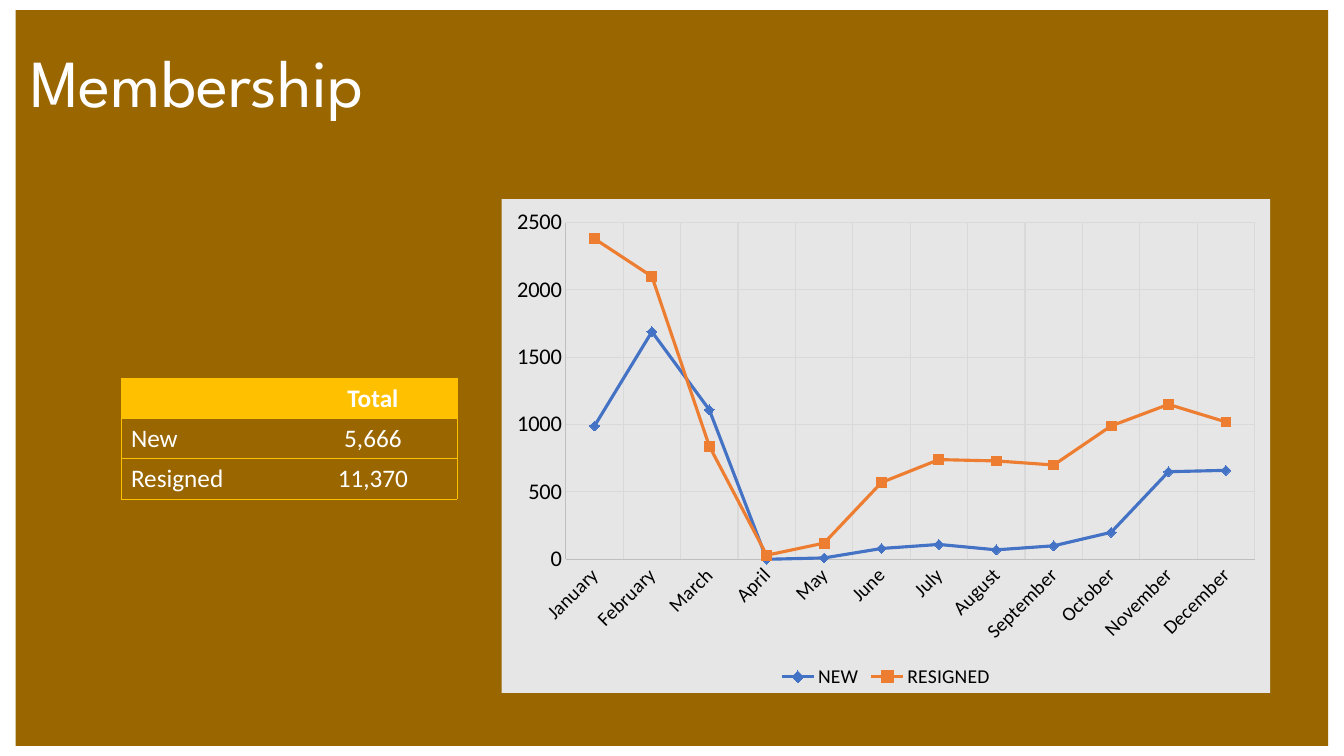
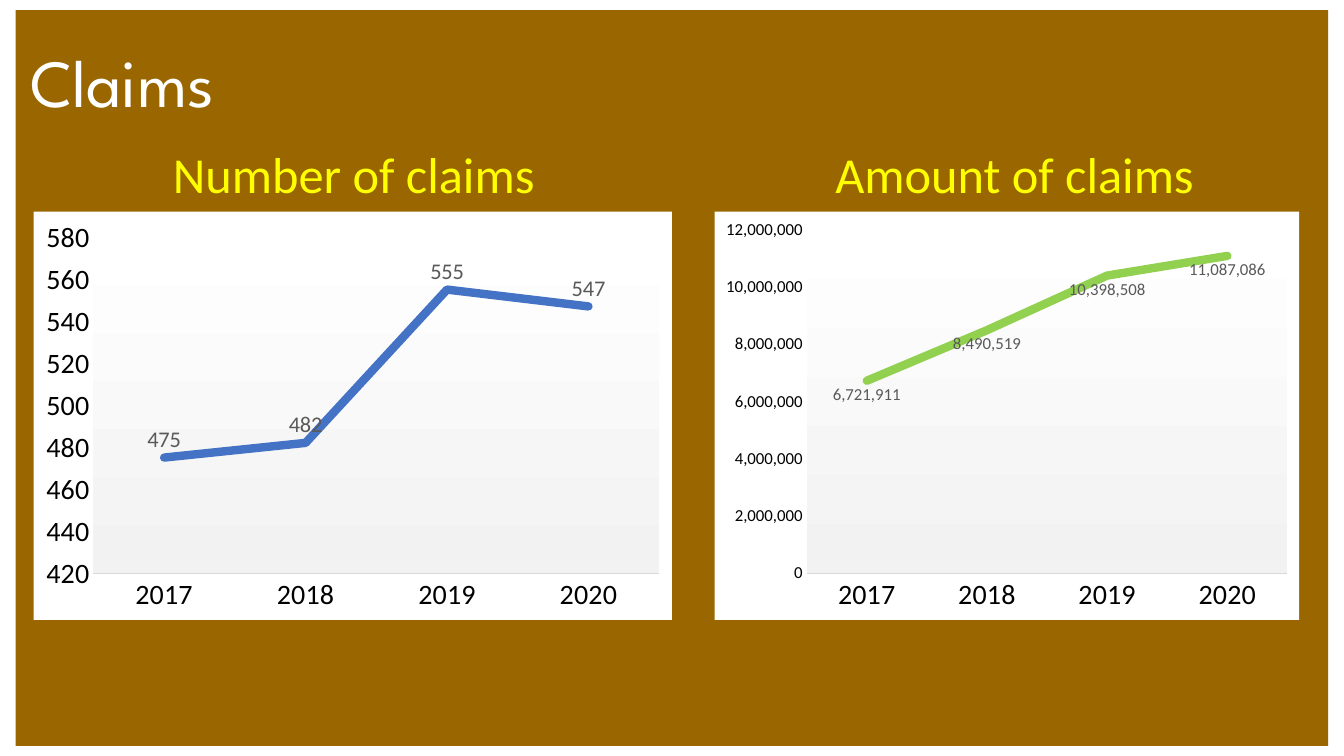
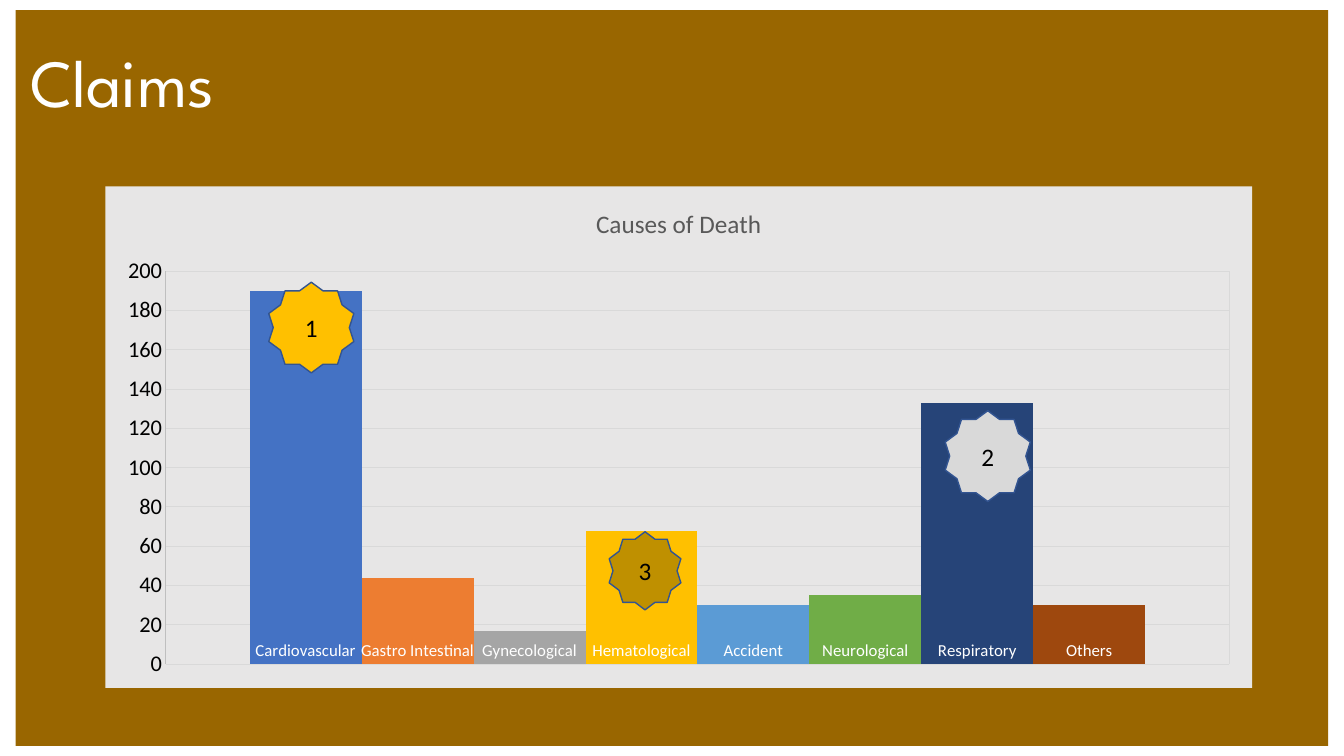
from dataclasses import dataclass

from lxml import etree
from pptx import Presentation
from pptx.chart.data import CategoryChartData as ChartData
from pptx.dml.color import RGBColor as RGB
from pptx.enum.chart import XL_CHART_TYPE as ChartType
from pptx.enum.chart import XL_LABEL_POSITION as LabelAt
from pptx.enum.chart import XL_LEGEND_POSITION as LegendAt
from pptx.enum.chart import XL_MARKER_STYLE as Marker
from pptx.enum.chart import XL_TICK_MARK as Tick
from pptx.enum.shapes import MSO_SHAPE as Preset
from pptx.enum.text import MSO_ANCHOR as Anchor
from pptx.enum.text import PP_ALIGN as Align
from pptx.oxml import parse_xml
from pptx.oxml.ns import nsdecls, qn
from pptx.util import Inches, Pt


@dataclass(frozen=True)
class Theme:
    title_font: str = "League Spartan"
    body_font: str = "Calibri"
    brown: str = "996600"
    white: str = "FFFFFF"
    black: str = "000000"
    yellow: str = "FFFF00"
    gold: str = "FFC000"
    silver: str = "D9D9D9"
    bronze: str = "BF9000"
    outline: str = "325491"
    blue: str = "4472C4"
    orange: str = "ED7D31"
    green: str = "92D050"
    panel: str = "E7E6E6"
    pale: str = "F2F2F2"
    grid: str = "D9D9D9"
    axis: str = "BFBFBF"
    grey: str = "595959"
    title: int = 48
    heading: int = 36
    large: int = 20
    body: int = 18
    medium: int = 16
    legend: int = 14
    small: int = 12


theme = Theme()


def write(frame, text, size, color, font=theme.body_font, align=Align.LEFT, bold=False):
    frame.word_wrap = True
    frame.vertical_anchor = Anchor.MIDDLE
    paragraph = frame.paragraphs[0]
    paragraph.alignment = align
    run = paragraph.add_run()
    run.text = text
    run.font.name, run.font.size, run.font.bold = font, Pt(size), bold
    run.font.color.rgb = RGB.from_string(color)


def style_chart(chart, fill, category_size, value_size, scale, axis_lines, grids):
    chart.has_title = chart.has_legend = False
    chart.font.name, chart.font.size = theme.body_font, Pt(10)
    chart.font.color.rgb = RGB.from_string(theme.black)
    chart._chartSpace.find(qn("c:chart")).addnext(parse_xml(
        f'<c:spPr {nsdecls("c", "a")}><a:solidFill><a:srgbClr val="{fill}"/></a:solidFill>'
        '<a:ln><a:noFill/></a:ln></c:spPr>'))
    value_axis = chart.value_axis
    value_axis.minimum_scale, value_axis.maximum_scale, value_axis.major_unit = scale
    axes = (chart.category_axis, value_axis)
    for axis, size, line, grid in zip(axes, (category_size, value_size), axis_lines, grids):
        axis.major_tick_mark = axis.minor_tick_mark = Tick.NONE
        font = axis.tick_labels.font
        font.name, font.size = theme.body_font, Pt(size)
        font.color.rgb = RGB.from_string(theme.black)
        axis.format.line.width = Pt(0.75)
        if line:
            axis.format.line.color.rgb = RGB.from_string(line)
        else:
            axis.format.line.fill.background()
        axis.has_major_gridlines = grid
        if grid:
            axis.major_gridlines.format.line.width = Pt(0.75)
            axis.major_gridlines.format.line.color.rgb = RGB.from_string(theme.grid)


deck = Presentation()
deck.slide_width, deck.slide_height = Inches(13.33), Inches(7.5)
col, row = deck.slide_width // 600, deck.slide_height // 300

slides = []
for title in ("Membership", "Claims", "Claims"):
    slide = deck.slides.add_slide(deck.slide_layouts[6])
    band = slide.shapes.add_shape(Preset.RECTANGLE, 7 * col, 4 * row, 586 * col, 292 * row)
    band.shadow.inherit = False
    band.fill.solid()
    band.fill.fore_color.rgb = RGB.from_string(theme.brown)
    band.line.fill.background()
    heading = slide.shapes.add_textbox(9 * col, 5 * row, 518 * col, 58 * row).text_frame
    write(heading, title, theme.title, theme.white, theme.title_font)
    heading.paragraphs[0].line_spacing = 0.9
    slides.append(slide)
membership, claims, causes = slides

totals = (("", "Total"), ("New", "5,666"), ("Resigned", "11,370"))
totals_table = membership.shapes.add_table(
    len(totals), 2, 54 * col, 150 * row, 150 * col, 48 * row).table
totals_table.horz_banding = False
totals_table._tbl.tblPr.find(qn("a:tableStyleId")).text = "{2D5ABB26-0587-4C30-8999-92F81FD0307C}"
for row_index, entries in enumerate(totals):
    for column_index, entry in enumerate(entries):
        cell = totals_table.cell(row_index, column_index)
        for side in (("lnL", "lnR")[column_index], "lnT", "lnB"):
            border = etree.SubElement(cell._tc.get_or_add_tcPr(), qn(f"a:{side}"), w=str(Pt(0.5)))
            paint = etree.SubElement(border, qn("a:solidFill"))
            etree.SubElement(paint, qn("a:srgbClr"), val=theme.gold)
        if row_index == 0:
            cell.fill.solid()
            cell.fill.fore_color.rgb = RGB.from_string(theme.gold)
        else:
            cell.fill.background()
        write(cell.text_frame, entry, theme.body, theme.white,
              align=(Align.LEFT, Align.CENTER)[column_index], bold=row_index == 0)

months = ChartData()
months.categories = ("January", "February", "March", "April", "May", "June", "July",
                     "August", "September", "October", "November", "December")
months.add_series("NEW", (990, 1690, 1110, 0, 10, 80, 110, 70, 100, 200, 650, 660))
months.add_series("RESIGNED", (2380, 2100, 840, 30, 120, 570, 740, 730, 700, 990, 1150, 1020))
members = membership.shapes.add_chart(
    ChartType.LINE_MARKERS, 224 * col, 79 * row, 343 * col, 196 * row, months).chart
style_chart(members, theme.panel, theme.legend, theme.medium, (0, 2500, 500),
            (theme.axis, theme.axis), (True, True))
members.category_axis._element.find(qn("c:txPr")).find(qn("a:bodyPr")).set("rot", "-2700000")
members.has_legend = True
members.legend.position = LegendAt.BOTTOM
members.legend.include_in_layout = False
members.legend.font.name, members.legend.font.size = theme.body_font, Pt(theme.legend)
members.legend.font.color.rgb = RGB.from_string(theme.black)
looks = ((theme.blue, Marker.DIAMOND), (theme.orange, Marker.SQUARE))
for trend, (color, marker) in zip(members.plots[0].series, looks):
    trend.smooth = False
    trend.format.line.width = Pt(2.25)
    trend.format.line.color.rgb = RGB.from_string(color)
    trend.marker.style, trend.marker.size = marker, 7
    trend.marker.format.fill.solid()
    trend.marker.format.fill.fore_color.rgb = RGB.from_string(color)
    trend.marker.format.line.color.rgb = RGB.from_string(color)

claim_panels = (
    ("Number of claims", 50, 15, 285, ChartType.LINE_STACKED, (475, 482, 555, 547), "General",
     (420, 580, 20), theme.large, theme.medium, LabelAt.ABOVE, theme.blue),
    ("Amount of claims", 345, 319, 261, ChartType.LINE,
     (6721911, 8490519, 10398508, 11087086), "#,##0",
     (0, 12000000, 2000000), theme.small, theme.small, LabelAt.BELOW, theme.green),
)
for (caption, caption_left, left, width, kind, values, number_format,
     scale, value_size, label_size, label_at, color) in claim_panels:
    years = ChartData(number_format=number_format)
    years.categories = ("2017", "2018", "2019", "2020")
    years.add_series("Series 1", values)
    history = claims.shapes.add_chart(
        kind, left * col, 84 * row, width * col, 162 * row, years).chart
    style_chart(history, theme.white, theme.large, value_size, scale,
                (theme.grid, None), (False, False))
    history.value_axis.tick_labels.number_format = number_format
    history.value_axis.tick_labels.number_format_is_linked = False
    history._chartSpace.find(qn("c:chart")).find(qn("c:plotArea")).append(parse_xml(
        f'<c:spPr {nsdecls("c", "a")}><a:gradFill><a:gsLst>'
        f'<a:gs pos="0"><a:srgbClr val="{theme.white}"/></a:gs>'
        f'<a:gs pos="100000"><a:srgbClr val="{theme.pale}"/></a:gs>'
        '</a:gsLst><a:lin ang="5400000" scaled="0"/></a:gradFill></c:spPr>'))
    trend = history.plots[0].series[0]
    trend.smooth = False
    trend.marker.style = Marker.NONE
    trend.format.line.width = Pt(6)
    trend.format.line.color.rgb = RGB.from_string(color)
    trend.format.line._get_or_add_ln().set("cap", "rnd")
    labels = trend.data_labels
    labels.show_value, labels.position = True, label_at
    labels.number_format, labels.number_format_is_linked = number_format, False
    labels.font.name, labels.font.size = theme.body_font, Pt(label_size)
    labels.font.color.rgb = RGB.from_string(theme.grey)
    heading = claims.shapes.add_textbox(
        caption_left * col, 52 * row, 216 * col, 37 * row).text_frame
    write(heading, caption, theme.heading, theme.yellow, align=Align.CENTER)
    heading.paragraphs[0].line_spacing = 0.9

deaths = (
    ("Cardiovascular", 190, theme.blue),
    ("Gastro Intestinal", 44, theme.orange),
    ("Gynecological", 17, "A5A5A5"),
    ("Hematological", 68, theme.gold),
    ("Accident", 30, "5B9BD5"),
    ("Neurological", 35, "70AD47"),
    ("Respiratory", 133, "264478"),
    ("Others", 30, "9E480E"),
)
counts = ChartData()
counts.categories = ("1",)
for cause, count, color in deaths:
    counts.add_series(cause, (count,))
death_chart = causes.shapes.add_chart(
    ChartType.COLUMN_CLUSTERED, 47 * col, 74 * row, 512 * col, 199 * row, counts).chart
style_chart(death_chart, theme.panel, theme.medium, theme.medium, (0, 200, 20),
            (theme.axis, theme.axis), (True, True))
death_chart.category_axis.visible = False
death_chart.has_title = True
caption = death_chart.chart_title.text_frame.paragraphs[0].add_run()
caption.text = "Causes of Death"
caption.font.name, caption.font.size, caption.font.bold = theme.body_font, Pt(theme.body), False
caption.font.color.rgb = RGB.from_string(theme.grey)
bars = death_chart.plots[0]
bars.gap_width, bars.overlap, bars.vary_by_categories = 150, 0, False
for bar, (cause, count, color) in zip(bars.series, deaths):
    bar.format.fill.solid()
    bar.format.fill.fore_color.rgb = RGB.from_string(color)
    labels = bar.data_labels
    labels.show_series_name, labels.show_value = True, False
    labels.position = LabelAt.INSIDE_BASE
    labels.font.name, labels.font.size = theme.body_font, Pt(theme.small)
    labels.font.color.rgb = RGB.from_string(theme.white)

medals = (
    ("1", 120, 112, 38, 36, theme.gold),
    ("2", 422, 163, 38, 36, theme.silver),
    ("3", 272, 211, 32, 31, theme.bronze),
)
for rank, left, top, width, height, color in medals:
    medal = causes.shapes.add_shape(
        Preset.STAR_10_POINT, left * col, top * row, width * col, height * row)
    medal.shadow.inherit = False
    medal.fill.solid()
    medal.fill.fore_color.rgb = RGB.from_string(color)
    medal.line.width = Pt(1)
    medal.line.color.rgb = RGB.from_string(theme.outline)
    write(medal.text_frame, rank, theme.body, theme.black, align=Align.CENTER)

deck.save("out.pptx")
